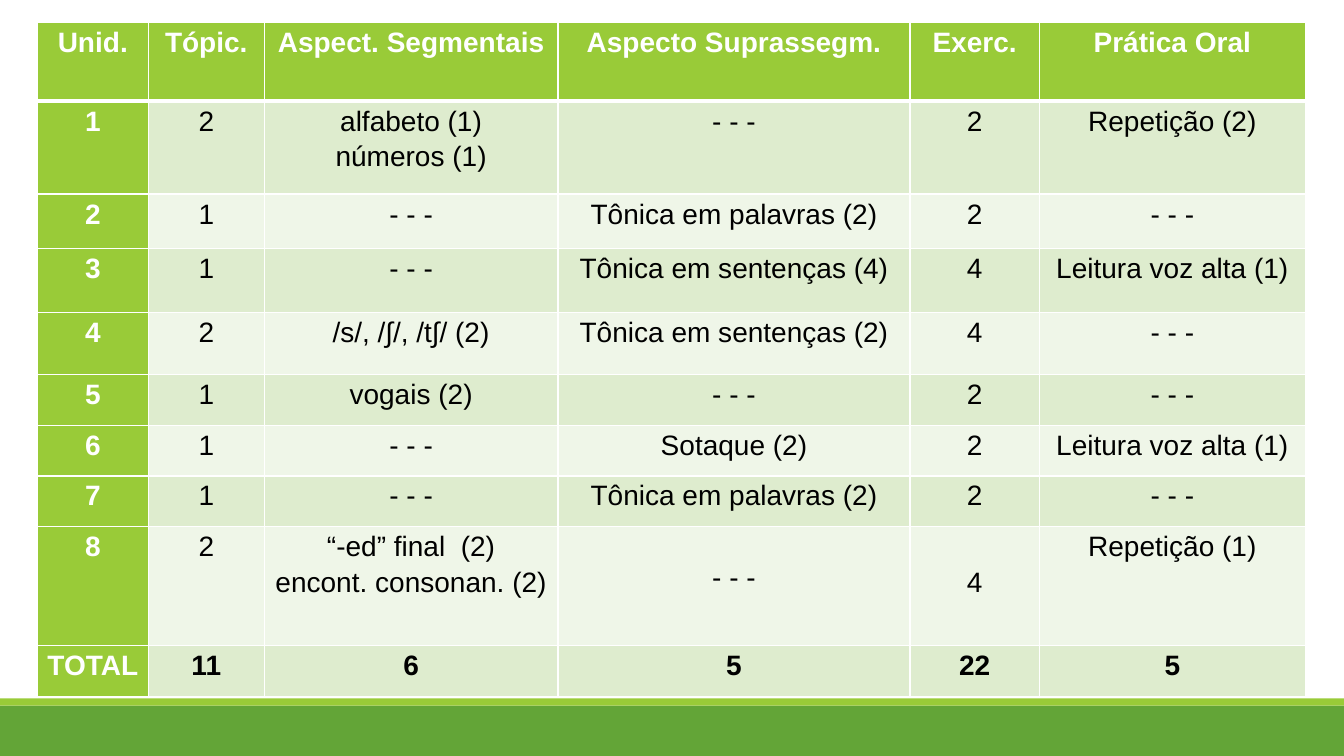
from lxml import etree
from pptx import Presentation
from pptx.dml.color import RGBColor
from pptx.enum.shapes import MSO_SHAPE
from pptx.enum.text import PP_ALIGN
from pptx.oxml.ns import qn
from pptx.util import Inches, Pt

RECT = MSO_SHAPE.RECTANGLE
CENTER = PP_ALIGN.CENTER
COLORS = {
    "lime": "99CB38",
    "green": "63A537",
    "odd": "DEECCE",
    "even": "EFF6E8",
    "white": "FFFFFF",
    "black": "000000",
}
NONE = "- - -"
ROWS = [
    ["Unid.", "Tópic.", "Aspect. Segmentais", "Aspecto Suprassegm.", "Exerc.", "Prática Oral"],
    ["1", "2", "alfabeto (1)\nnúmeros (1)", NONE, "2", "Repetição (2)"],
    ["2", "1", NONE, "Tônica em palavras (2)", "2", NONE],
    ["3", "1", NONE, "Tônica em sentenças (4)", "4", "Leitura voz alta (1)"],
    ["4", "2", "/s/, /∫/, /t∫/ (2)", "Tônica em sentenças (2)", "4", NONE],
    ["5", "1", "vogais (2)", NONE, "2", NONE],
    ["6", "1", NONE, "Sotaque (2)", "2", "Leitura voz alta (1)"],
    ["7", "1", NONE, "Tônica em palavras (2)", "2", NONE],
    ["8", "2", "“-ed” final  (2)\nencont. consonan. (2)", NONE, "4", "Repetição (1)"],
    ["TOTAL", "11", "6", "5", "22", "5"],
]
WIDTHS = [1.1, 1.15, 2.91, 3.49, 1.28, 2.64]
HEIGHTS = [0.78, 0.92, 0.54, 0.63, 0.62, 0.5, 0.5, 0.5, 1.18, 0.5]
DROPS = {(8, 3): 0.31, (8, 4): 0.36}


def color(name):
    """Return the named colour."""
    return RGBColor.from_string(COLORS[name])


def add_border(cell, side, width):
    """Draw one white border of a cell."""
    line = etree.SubElement(cell._tc.get_or_add_tcPr(), qn(f"a:ln{side}"), w=str(Pt(width)))
    fill = etree.SubElement(line, qn("a:solidFill"))
    etree.SubElement(fill, qn("a:srgbClr"), val=COLORS["white"])


def style_cell(cell, row, col):
    """Format one cell by its place in the table."""
    head = row == 0 or col == 0
    bold = head or row == len(ROWS) - 1
    for side in "LRTB":
        thick = (row == 0 and side == "B") or (row == 1 and side == "T")
        add_border(cell, side, 3 if thick else 1)
    cell.fill.solid()
    cell.fill.fore_color.rgb = color("lime" if head else "odd" if row % 2 else "even")
    cell.margin_left = cell.margin_right = Inches(0.07)
    cell.margin_top = Inches(DROPS.get((row, col), 0))
    cell.margin_bottom = 0
    for para in cell.text_frame.paragraphs:
        para.alignment = CENTER
        para.line_spacing = 1.15
        for run in para.runs:
            run.font.name = "Arial"
            run.font.size = Pt(20)
            run.font.bold = bold
            run.font.color.rgb = color("white" if head else "black")


def add_units(slide, left, top, width, height):
    """Place the table of units in the given box."""
    frame = slide.shapes.add_table(
        len(ROWS), len(WIDTHS), Inches(left), Inches(top), Inches(width), Inches(height)
    )
    table = frame.table
    for col, size in enumerate(WIDTHS):
        table.columns[col].width = Inches(size * width / sum(WIDTHS))
    for row, size in enumerate(HEIGHTS):
        table.rows[row].height = Inches(size * height / sum(HEIGHTS))
        for col, text in enumerate(ROWS[row]):
            cell = table.cell(row, col)
            cell.text_frame.text = text
            style_cell(cell, row, col)


def add_footer(slide, left, top, width, height):
    """Place the thin and the wide footer band in the given box."""
    thin = 0.07
    for name, drop, size in (("green", thin, height - thin), ("lime", 0, thin)):
        band = slide.shapes.add_shape(
            RECT, Inches(left), Inches(top + drop), Inches(width), Inches(size)
        )
        band.shadow.inherit = False
        band.fill.solid()
        band.fill.fore_color.rgb = color(name)
        band.line.fill.background()


def main():
    """Build and save the slide."""
    deck = Presentation()
    deck.slide_width = Inches(13.33)
    deck.slide_height = Inches(7.5)
    slide = deck.slides.add_slide(deck.slide_layouts[6])
    add_footer(slide, 0, 6.93, 13.33, 0.57)
    add_units(slide, 0.37, 0.22, 12.58, 6.69)
    deck.save("out.pptx")


if __name__ == "__main__":
    main()
